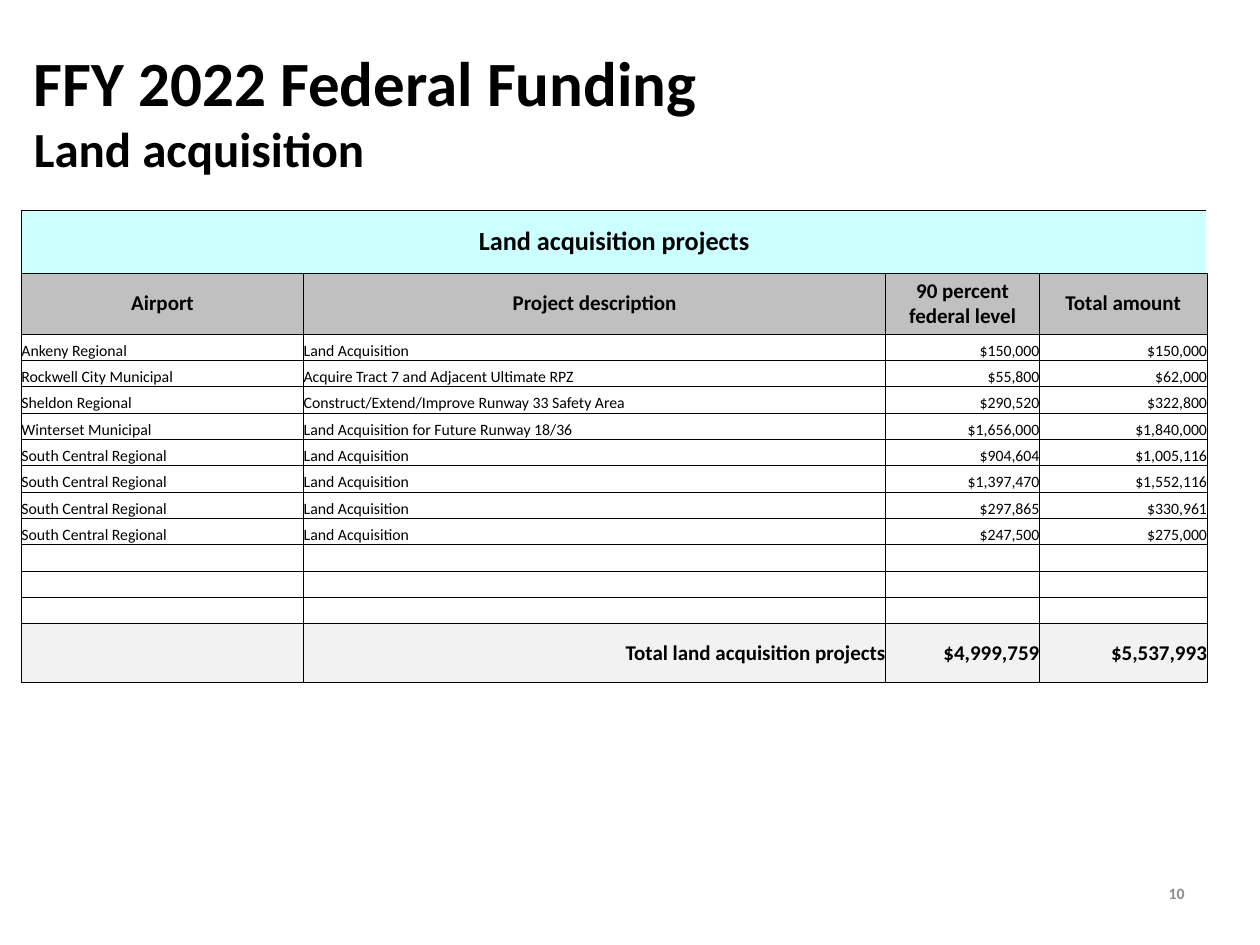
"""Build the FFY 2022 land acquisition funding slide."""
from lxml import etree
from pptx import Presentation
from pptx.dml.color import RGBColor
from pptx.enum.text import MSO_ANCHOR, PP_ALIGN
from pptx.oxml.ns import qn
from pptx.util import Inches, Pt

FONT = "Calibri"
BLACK, GRAY = "000000", "8C8C8C"
TITLE_LINES = [("FFY 2022 Federal Funding", 36), ("Land acquisition", 28)]
PAGE_NUMBER = "10"

BANNER = "Land acquisition projects"
HEADINGS = ["Airport", "Project description", "90 percent federal level", "Total amount"]
PROJECTS = [
    ("Ankeny Regional", "Land Acquisition", "$150,000", "$150,000"),
    ("Rockwell City Municipal", "Acquire Tract 7 and Adjacent Ultimate RPZ", "$55,800", "$62,000"),
    ("Sheldon Regional", "Construct/Extend/Improve Runway 33 Safety Area", "$290,520", "$322,800"),
    ("Winterset Municipal", "Land Acquisition for Future Runway 18/36", "$1,656,000", "$1,840,000"),
    ("South Central Regional", "Land Acquisition", "$904,604", "$1,005,116"),
    ("South Central Regional", "Land Acquisition", "$1,397,470", "$1,552,116"),
    ("South Central Regional", "Land Acquisition", "$297,865", "$330,961"),
    ("South Central Regional", "Land Acquisition", "$247,500", "$275,000"),
]
SPARE_ROWS = 3
TOTALS = ["", "Total land acquisition projects", "$4,999,759", "$5,537,993"]

LEFT, TOP, TABLE_HEIGHT = 0.17, 1.67, 3.75
COLUMN_WIDTHS = [2.24, 4.62, 1.22, 1.33]
BANNER_HEIGHT, HEADING_HEIGHT, TOTAL_HEIGHT = 0.5, 0.48, 0.47

L, C, R = PP_ALIGN.LEFT, PP_ALIGN.CENTER, PP_ALIGN.RIGHT
MIDDLE, BOTTOM = MSO_ANCHOR.MIDDLE, MSO_ANCHOR.BOTTOM
STYLES = {
    "banner": dict(size=15, bold=True, fill="CCFFFF", anchor=MIDDLE, aligns=[C] * 4),
    "heading": dict(size=12, bold=True, fill="C0C0C0", anchor=MIDDLE, aligns=[C] * 4),
    "project": dict(size=9, bold=False, fill=None, anchor=BOTTOM, aligns=[L, L, R, R]),
    "total": dict(size=12, bold=True, fill="F2F2F2", anchor=MIDDLE, aligns=[R] * 4),
}


def color(hex_string):
    return RGBColor.from_string(hex_string)


def set_font(font, size, bold, hex_string=BLACK):
    font.name, font.size, font.bold = FONT, Pt(size), bold
    font.color.rgb = color(hex_string)


def add_text(slide, left, top, width, height, align):
    frame = slide.shapes.add_textbox(*map(Inches, (left, top, width, height))).text_frame
    frame.word_wrap = True
    frame.vertical_anchor = MIDDLE
    frame.paragraphs[0].alignment = align
    return frame.paragraphs[0]


def add_borders(cell, sides):
    properties = cell._tc.get_or_add_tcPr()
    for side in sides:
        line = etree.SubElement(properties, qn(f"a:ln{side}"), w=str(Pt(0.5)))
        fill = etree.SubElement(line, qn("a:solidFill"))
        etree.SubElement(fill, qn("a:srgbClr"), val=BLACK)


def fill_cell(cell, words, align, style, sides):
    add_borders(cell, sides)
    cell.margin_left = cell.margin_right = cell.margin_top = cell.margin_bottom = 0
    cell.vertical_anchor = style["anchor"]
    if style["fill"]:
        cell.fill.solid()
        cell.fill.fore_color.rgb = color(style["fill"])
    else:
        cell.fill.background()
    paragraph = cell.text_frame.paragraphs[0]
    paragraph.alignment = align
    set_font(paragraph.font, style["size"], style["bold"])
    if words:
        paragraph.add_run().text = words
    else:
        etree.SubElement(paragraph._p, qn("a:endParaRPr"), sz=str(style["size"] * 100))


def add_funding_table(slide):
    body = PROJECTS + [[""] * 4] * SPARE_ROWS
    fixed_height = BANNER_HEIGHT + HEADING_HEIGHT + TOTAL_HEIGHT
    body_height = (TABLE_HEIGHT - fixed_height) / len(body)
    rows = [("banner", BANNER_HEIGHT, [BANNER, "", "", ""]), ("heading", HEADING_HEIGHT, HEADINGS)]
    rows += [("project", body_height, values) for values in body]
    rows.append(("total", TOTAL_HEIGHT, TOTALS))

    box = map(Inches, (LEFT, TOP, sum(COLUMN_WIDTHS), TABLE_HEIGHT))
    table = slide.shapes.add_table(len(rows), len(COLUMN_WIDTHS), *box).table
    table.first_row = table.horz_banding = False
    for column, width in zip(table.columns, COLUMN_WIDTHS):
        column.width = Inches(width)
    for row, (kind, height, values) in enumerate(rows):
        table.rows[row].height = Inches(height)
        style = STYLES[kind]
        for column, (words, align) in enumerate(zip(values, style["aligns"])):
            sides = "LRTB" if kind != "banner" else "TB" if column else "LTB"
            fill_cell(table.cell(row, column), words, align, style, sides)
    table.cell(0, 0).merge(table.cell(0, len(COLUMN_WIDTHS) - 1))


def main():
    presentation = Presentation()
    presentation.slide_width, presentation.slide_height = Inches(10), Inches(7.5)
    slide = presentation.slides.add_slide(presentation.slide_layouts[6])

    number = add_text(slide, 7.17, 6.83, 2.33, 0.52, R)
    set_font(number.font, 9, True, GRAY)
    number.add_run().text = PAGE_NUMBER

    title = add_text(slide, LEFT, 0.25, 9.42, 1.25, L)
    for index, (words, size) in enumerate(TITLE_LINES):
        if index:
            title.add_line_break()
        run = title.add_run()
        run.text = words
        set_font(run.font, size, True)

    add_funding_table(slide)
    presentation.save("out.pptx")


if __name__ == "__main__":
    main()
